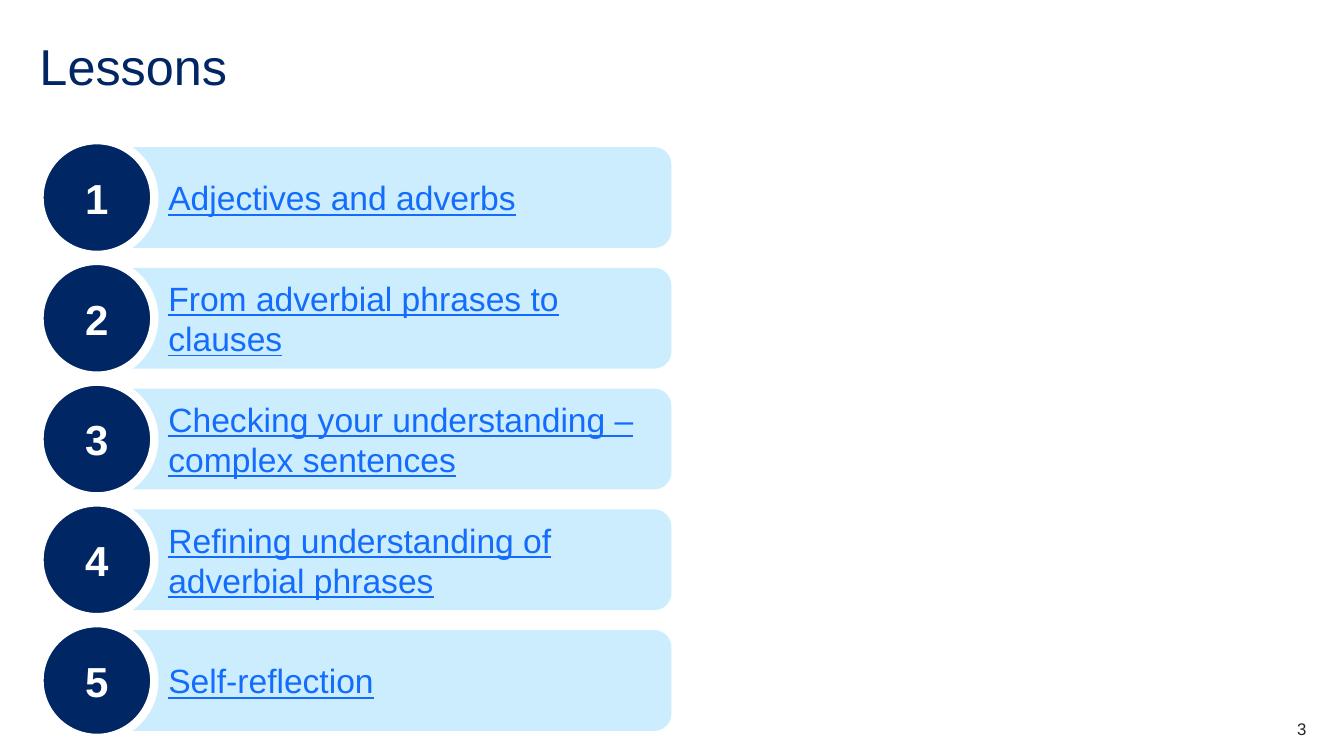
from dataclasses import dataclass

from pptx import Presentation
from pptx.dml.color import RGBColor
from pptx.enum.shapes import MSO_SHAPE
from pptx.enum.text import MSO_ANCHOR, PP_ALIGN
from pptx.shapes.autoshape import Shape
from pptx.slide import Slide
from pptx.util import Pt

ROUNDED = MSO_SHAPE.ROUNDED_RECTANGLE
OVAL = MSO_SHAPE.OVAL
MIDDLE = MSO_ANCHOR.MIDDLE
LEFT, CENTER, RIGHT = PP_ALIGN.LEFT, PP_ALIGN.CENTER, PP_ALIGN.RIGHT

NAVY, SKY, BLUE = "002664", "CBEDFD", "146CFD"
WHITE, CHARCOAL = "FFFFFF", "22272B"

LESSONS = [
    "Adjectives and adverbs",
    "From adverbial phrases to clauses",
    "Checking your understanding – complex sentences",
    "Refining understanding of adverbial phrases",
    "Self-reflection",
]
FIRST_CENTER = 141.1
LESSON_PITCH = 86.25
BAR_LEFT, BAR_WIDTH, BAR_HEIGHT = 81.4, 398.2, 72
BADGE_LEFT, BADGE_SIZE, BADGE_RING = 28.2, 82, 6
BAR_TEXT_MARGIN = 35.3


@dataclass(frozen=True)
class Style:
    size: float
    color: str
    align: PP_ALIGN = LEFT
    bold: bool = False
    underline: bool = False
    line_spacing: float = 1.0


TITLE = Style(36, NAVY, line_spacing=0.9)
LESSON = Style(24, BLUE, underline=True)
BADGE = Style(30, WHITE, CENTER, bold=True)
PAGE_NUMBER = Style(12, CHARCOAL, RIGHT)


def rgb(color: str) -> RGBColor:
    return RGBColor.from_string(color)


def write(box: Shape, text: str, style: Style) -> None:
    """Put one styled paragraph in the box, centred vertically."""
    frame = box.text_frame
    frame.word_wrap = True
    frame.vertical_anchor = MIDDLE
    para = frame.paragraphs[0]
    para.alignment = style.align
    para.line_spacing = style.line_spacing
    span = para.add_run()
    span.text = text
    span.font.name = "Arial"
    span.font.size = Pt(style.size)
    span.font.color.rgb = rgb(style.color)
    span.font.bold = style.bold
    span.font.underline = style.underline


def add_label(page: Slide, left: float, top: float, width: float,
              height: float, text: str, style: Style) -> None:
    box = page.shapes.add_textbox(Pt(left), Pt(top), Pt(width), Pt(height))
    frame = box.text_frame
    frame.margin_left = frame.margin_right = Pt(0)
    frame.margin_top = frame.margin_bottom = Pt(0)
    write(box, text, style)


def add_filled(page: Slide, kind: MSO_SHAPE, left: float, center: float,
               width: float, height: float, color: str) -> Shape:
    """Add a filled shape without outline, centred on a height of the page."""
    shape = page.shapes.add_shape(
        kind, Pt(left), Pt(center - height / 2), Pt(width), Pt(height))
    shape.shadow.inherit = False
    shape.fill.solid()
    shape.fill.fore_color.rgb = rgb(color)
    shape.line.fill.background()
    return shape


def add_lesson(page: Slide, number: int, name: str) -> None:
    center = FIRST_CENTER + (number - 1) * LESSON_PITCH
    bar = add_filled(page, ROUNDED, BAR_LEFT, center,
                     BAR_WIDTH, BAR_HEIGHT, SKY)
    bar.adjustments[0] = 0.17
    bar.text_frame.margin_left = Pt(BAR_TEXT_MARGIN)
    write(bar, name, LESSON)

    badge = add_filled(page, OVAL, BADGE_LEFT, center,
                       BADGE_SIZE, BADGE_SIZE, NAVY)
    badge.line.color.rgb = rgb(WHITE)
    badge.line.width = Pt(BADGE_RING)
    write(badge, str(number), BADGE)


def main() -> None:
    deck = Presentation()
    deck.slide_width, deck.slide_height = Pt(960), Pt(540)
    page = deck.slides.add_slide(deck.slide_layouts[6])
    add_label(page, 28.2, 28.2, 904, 43.2, "Lessons", TITLE)
    for number, name in enumerate(LESSONS, start=1):
        add_lesson(page, number, name)
    add_label(page, 876.2, 513.4, 57, 14.4, "3", PAGE_NUMBER)
    deck.save("out.pptx")


if __name__ == "__main__":
    main()
